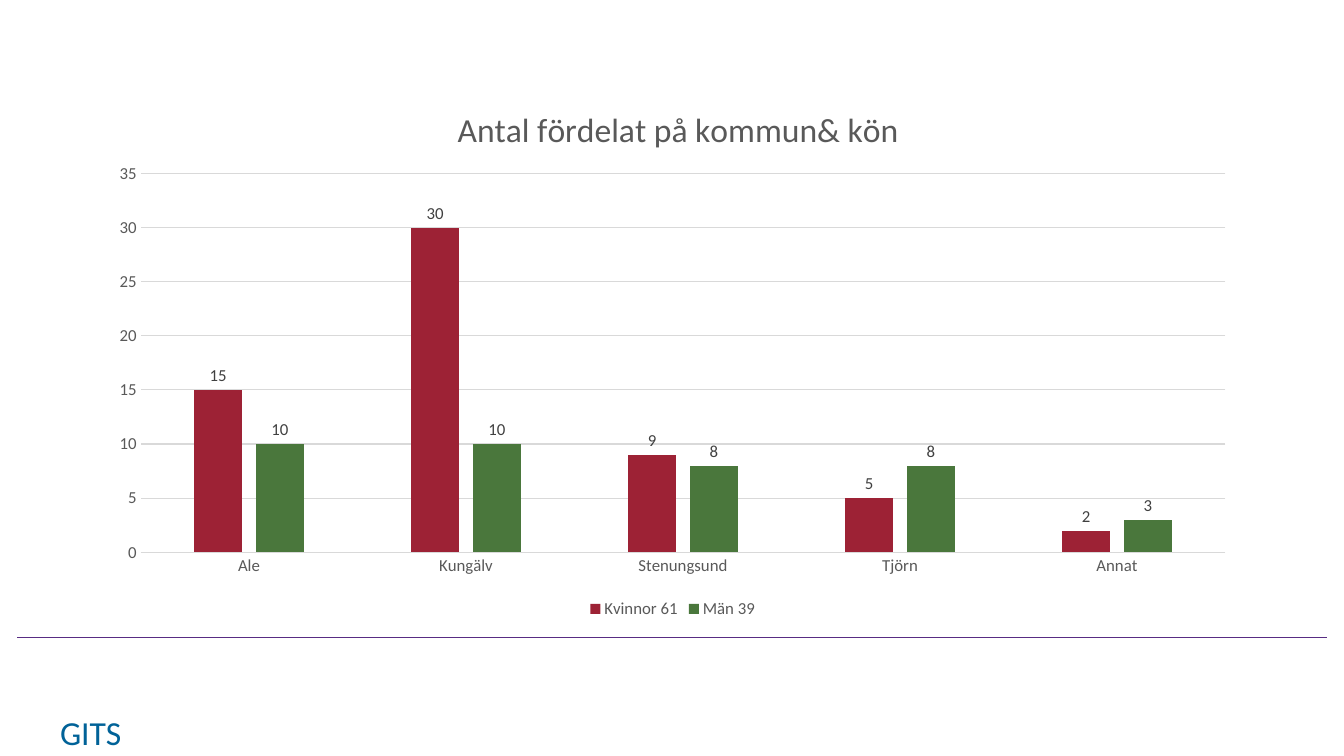
from dataclasses import dataclass

from lxml import etree
from pptx import Presentation
from pptx.chart.data import CategoryChartData
from pptx.dml.color import RGBColor
from pptx.enum.chart import XL_CHART_TYPE, XL_LABEL_POSITION, XL_LEGEND_POSITION, XL_TICK_MARK
from pptx.enum.shapes import MSO_CONNECTOR
from pptx.enum.text import PP_ALIGN
from pptx.oxml.ns import qn
from pptx.util import Inches, Pt

COLUMNS = XL_CHART_TYPE.COLUMN_CLUSTERED
OUTSIDE_END = XL_LABEL_POSITION.OUTSIDE_END
BOTTOM = XL_LEGEND_POSITION.BOTTOM
NO_TICK = XL_TICK_MARK.NONE
STRAIGHT = MSO_CONNECTOR.STRAIGHT
CENTER = PP_ALIGN.CENTER

RED = RGBColor(0x9D, 0x22, 0x35)
GREEN = RGBColor(0x4A, 0x77, 0x3C)
PURPLE = RGBColor(0x58, 0x2C, 0x83)
BLUE = RGBColor(0x00, 0x62, 0x98)
GREY = RGBColor(0x59, 0x59, 0x59)
DARK_GREY = RGBColor(0x40, 0x40, 0x40)
LIGHT_GREY = RGBColor(0xD9, 0xD9, 0xD9)

FONT = "Calibri"
WIDTH, HEIGHT = 13.33, 7.5
MUNICIPALITIES = ("Ale", "Kungälv", "Stenungsund", "Tjörn", "Annat")


@dataclass(frozen=True)
class Gender:
    name: str
    counts: tuple[int, ...]
    color: RGBColor


@dataclass(frozen=True)
class Area:
    left: float
    top: float
    width: float
    height: float

    def on_slide(self) -> tuple[int, int, int, int]:
        return (Inches(self.left * WIDTH), Inches(self.top * HEIGHT),
                Inches(self.width * WIDTH), Inches(self.height * HEIGHT))


GENDERS = (
    Gender("Kvinnor 61", (15, 30, 9, 5, 2), RED),
    Gender("Män 39", (10, 10, 8, 8, 3), GREEN),
)
CHART_AREA = Area(0.072, 0.1, 0.857, 0.724)
SENDER_AREA = Area(0.035, 0.935, 0.065, 0.067)
PLOT_SHARES = {"x": 0.038, "y": 0.179, "w": 0.942, "h": 0.692}
TITLE_SHARES = {"x": 0.308, "y": 0.046}


def style_font(font, size: int, color: RGBColor) -> None:
    font.name = FONT
    font.size = Pt(size)
    font.bold = False
    font.color.rgb = color


def set_layout(parent, index: int, shares: dict[str, float]) -> None:
    for old in parent.findall(qn("c:layout")):
        parent.remove(old)
    layout = etree.Element(qn("c:layout"))
    manual = etree.SubElement(layout, qn("c:manualLayout"))
    settings = {"layoutTarget": "inner"} if "w" in shares else {}
    settings |= {f"{side}Mode": "edge" for side in ("x", "y")}
    settings |= {side: str(share) for side, share in shares.items()}
    for tag, value in settings.items():
        etree.SubElement(manual, qn(f"c:{tag}")).set("val", value)
    parent.insert(index, layout)


def style_axis(axis) -> None:
    axis.major_tick_mark = NO_TICK
    axis.minor_tick_mark = NO_TICK
    style_font(axis.tick_labels.font, 12, GREY)


def style_line(line) -> None:
    line.color.rgb = LIGHT_GREY
    line.width = Pt(0.75)


def add_gender_chart(slide) -> None:
    data = CategoryChartData()
    data.categories = MUNICIPALITIES
    for gender in GENDERS:
        data.add_series(gender.name, gender.counts)
    chart = slide.shapes.add_chart(COLUMNS, *CHART_AREA.on_slide(), data).chart
    chart.font.name = FONT
    chart.font.size = Pt(10)

    chart.has_title = True
    heading = chart.chart_title.text_frame
    heading.text = "Antal fördelat på kommun& kön"
    style_font(heading.paragraphs[0].runs[0].font, 24, GREY)
    chart.chart_title.include_in_layout = False
    title = chart.element.chart.find(qn("c:title"))
    set_layout(title, 1, TITLE_SHARES)
    set_layout(chart.element.chart.plotArea, 0, PLOT_SHARES)

    chart.has_legend = True
    chart.legend.position = BOTTOM
    chart.legend.include_in_layout = False
    style_font(chart.legend.font, 12, GREY)

    style_axis(chart.category_axis)
    style_line(chart.category_axis.format.line)
    counts = chart.value_axis
    style_axis(counts)
    counts.minimum_scale, counts.maximum_scale, counts.major_unit = 0, 35, 5
    counts.format.line.fill.background()
    style_line(counts.major_gridlines.format.line)

    plot = chart.plots[0]
    plot.gap_width, plot.overlap = 219, -27
    plot.vary_by_categories = False
    for gender, series in zip(GENDERS, plot.series):
        series.format.fill.solid()
        series.format.fill.fore_color.rgb = gender.color
        labels = series.data_labels
        labels.show_value = True
        labels.position = OUTSIDE_END
        style_font(labels.font, 12, DARK_GREY)


def add_footer(slide) -> None:
    margin, level = 0.0128, 0.843
    rule = slide.shapes.add_connector(
        STRAIGHT, Inches(margin * WIDTH), Inches(level * HEIGHT),
        Inches((1 - margin) * WIDTH), Inches(level * HEIGHT))
    rule.line.color.rgb = PURPLE
    rule.line.width = Pt(1)
    etree.SubElement(rule.element.spPr, qn("a:effectLst"))

    sender = slide.shapes.add_textbox(*SENDER_AREA.on_slide()).text_frame
    sender.word_wrap = True
    sender.text = "GITS"
    sender.paragraphs[0].alignment = CENTER
    style_font(sender.paragraphs[0].runs[0].font, 24, BLUE)


def main() -> None:
    deck = Presentation()
    deck.slide_width, deck.slide_height = Inches(WIDTH), Inches(HEIGHT)
    slide = deck.slides.add_slide(deck.slide_layouts[6])
    add_footer(slide)
    add_gender_chart(slide)
    deck.save("out.pptx")


if __name__ == "__main__":
    main()
